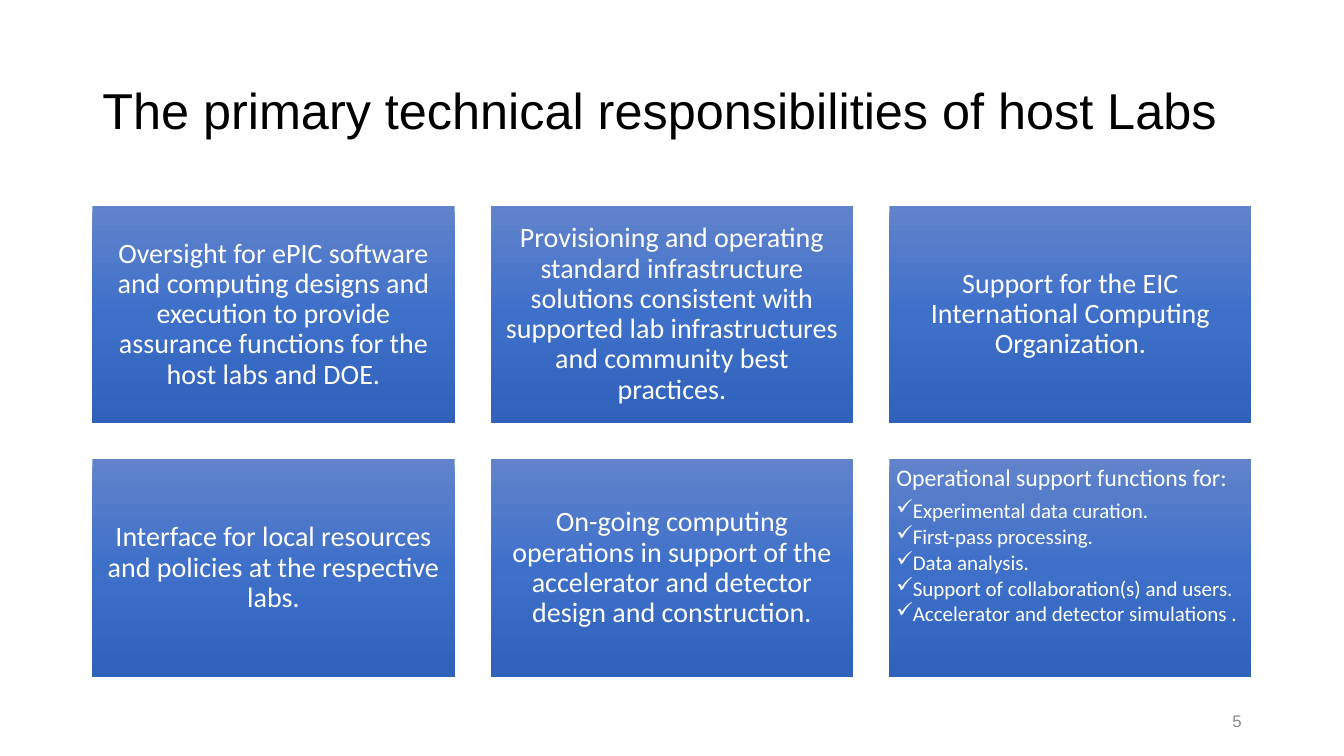
"""Build the slide on the technical duties of the host labs."""
from copy import deepcopy
from dataclasses import dataclass

from lxml.etree import SubElement as Sub
from pptx import Presentation
from pptx.dml.color import RGBColor as RGB
from pptx.enum.shapes import MSO_SHAPE as Shape
from pptx.enum.text import MSO_ANCHOR as Anchor, PP_ALIGN as Align
from pptx.oxml.ns import qn
from pptx.util import Pt


@dataclass(frozen=True)
class Theme:
    """Colours, fonts and type sizes."""
    ink: str = "000000"
    pale: str = "FFFFFF"
    grey: str = "8C8C8C"
    blend: tuple = ((0, "6183CB"), (0.5, "3E70CA"), (1, "3062BB"))
    head: str = "Arial"
    body: str = "Calibri"
    title: int = 36
    card: int = 20
    lead: int = 17
    item: int = 15
    page: int = 12


def apply(obj, vals):
    """Set each value of a dict as an attribute."""
    for name, val in vals.items():
        setattr(obj, name, val)


class Deck:
    """Hold the style and the current slide."""

    def __init__(self, theme):
        """Open a deck with one blank slide."""
        self.theme = theme
        self.file = Presentation()
        apply(self.file, {"slide_width": Pt(960), "slide_height": Pt(540)})
        self.slide = self.file.slides.add_slide(self.file.slide_layouts[6])

    def frame(self, shape, anchor, inset=None):
        """Set up the text frame of a shape."""
        frame = shape.text_frame
        apply(frame, {"word_wrap": True, "vertical_anchor": anchor})
        if inset is not None:
            sides = ("left", "top", "right", "bottom")
            apply(frame, {f"margin_{side}": Pt(inset) for side in sides})
        return frame

    def style(self, para, text, size, face, tint, **form):
        """Fill a paragraph with one styled run."""
        apply(para, form)
        run = para.add_run()
        run.text = text
        apply(run.font, {"size": Pt(size), "name": face})
        run.font.color.rgb = RGB.from_string(tint)

    def label(self, box, text, size, tint, **form):
        """Add a text box with one line."""
        shape = self.slide.shapes.add_textbox(*map(Pt, box))
        frame = self.frame(shape, Anchor.MIDDLE)
        self.style(frame.paragraphs[0], text, size, self.theme.head, tint, **form)

    def panel(self, box):
        """Add a rectangle with a downward gradient."""
        shape = self.slide.shapes.add_shape(Shape.RECTANGLE, *map(Pt, box))
        shape.shadow.inherit = False
        shape.line.fill.background()
        fill = shape.fill
        fill.gradient()
        fill.gradient_angle = 270
        stops = shape._element.spPr.find(".//" + qn("a:gsLst"))
        stops.append(deepcopy(stops[0]))
        for stop, (place, tint) in zip(fill.gradient_stops, self.theme.blend):
            stop.color.rgb = RGB.from_string(tint)
            stop.position = place
        return shape

    def card(self, box, text):
        """Add a panel with centred text."""
        look = self.theme
        frame = self.frame(self.panel(box), Anchor.MIDDLE, 6)
        self.style(frame.paragraphs[0], text, look.card, look.body, look.pale,
                   alignment=Align.CENTER, line_spacing=0.9, space_after=Pt(7))

    def checks(self, box, lead, items):
        """Add a panel with a lead line and ticked items."""
        look = self.theme
        frame = self.frame(self.panel(box), Anchor.TOP, 5)
        form = {"alignment": Align.LEFT, "line_spacing": 0.9}
        self.style(frame.paragraphs[0], lead, look.lead, look.body, look.pale,
                   space_after=Pt(6), **form)
        for text in items:
            para = frame.add_paragraph()
            self.style(para, text, look.item, look.body, look.pale,
                       level=1, space_after=Pt(2.25), **form)
            props = para._p.get_or_add_pPr()
            props.set("marL", str(Pt(9)))
            props.set("indent", str(Pt(-9)))
            Sub(props, qn("a:buChar")).set("char", "✓")


CARDS = (
    "Oversight for ePIC software and computing designs and execution to provide "
    "assurance functions for the host labs and DOE.",
    "Provisioning and operating standard infrastructure solutions consistent with "
    "supported lab infrastructures and community best practices.",
    "Support for the EIC International Computing Organization.",
    "Interface for local resources and policies at the respective labs.",
    "On-going computing operations in support of the accelerator and detector "
    "design and construction.",
)
LEAD = "Operational support functions for:"
ITEMS = (
    "Experimental data curation.",
    "First-pass processing.",
    "Data analysis.",
    "Support of collaboration(s) and users.",
    "Accelerator and detector simulations .",
)
LEFT, TOP, WIDE, HIGH, GAP, COLS = 66, 147, 258.75, 155.25, 25.87, 3


def cell(num):
    """Give the box of a grid cell."""
    row, col = divmod(num, COLS)
    return LEFT + col * (WIDE + GAP), TOP + row * (HIGH + GAP), WIDE, HIGH


def main():
    """Draw and save the slide."""
    look = Theme()
    deck = Deck(look)
    deck.label((66, 28.75, 828, 104.4), "The primary technical responsibilities of host Labs",
               look.title, look.ink, line_spacing=0.9)
    deck.label((678, 500.5, 216, 28.75), "5", look.page, look.grey,
               alignment=Align.RIGHT, space_after=Pt(6))
    for num, text in enumerate(CARDS):
        deck.card(cell(num), text)
    deck.checks(cell(len(CARDS)), LEAD, ITEMS)
    deck.file.save("out.pptx")


if __name__ == "__main__":
    main()
